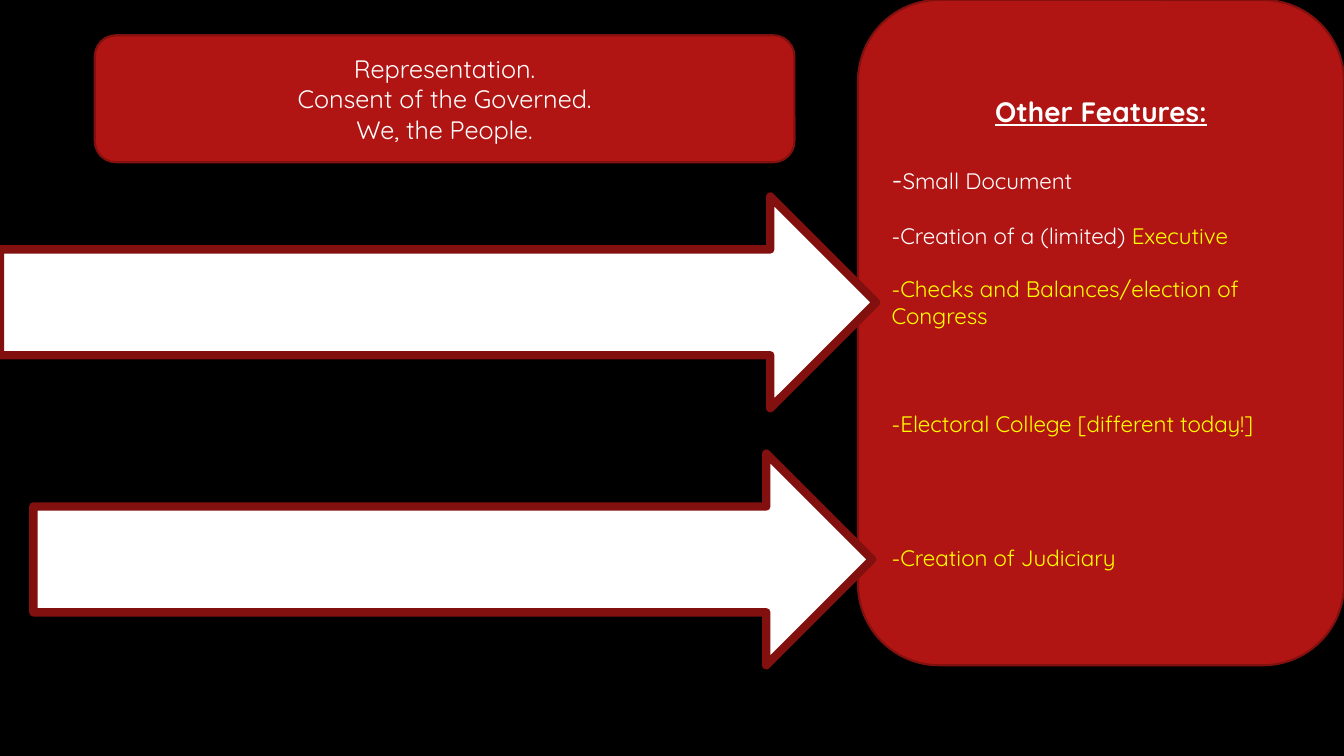
from dataclasses import dataclass

from pptx import Presentation
from pptx.dml.color import RGBColor
from pptx.enum.shapes import MSO_SHAPE as Preset
from pptx.enum.text import MSO_ANCHOR as Anchor, PP_ALIGN as Align
from pptx.shapes.autoshape import Shape
from pptx.slide import Slide
from pptx.util import Inches, Pt

SLIDE_WIDTH, SLIDE_HEIGHT = Inches(13.33), Inches(7.5)


@dataclass(frozen=True)
class Theme:
    font: str = "Quicksand"
    backdrop: RGBColor = RGBColor(0x00, 0x00, 0x00)
    red: RGBColor = RGBColor(0xB0, 0x15, 0x13)
    dark_red: RGBColor = RGBColor(0x82, 0x10, 0x0E)
    white: RGBColor = RGBColor(0xFF, 0xFF, 0xFF)
    yellow: RGBColor = RGBColor(0xFF, 0xFF, 0x00)
    heading_size: int = 20
    principle_size: int = 18
    feature_size: int = 16
    line_height: float = 1.2
    thin_line: float = 1.5
    thick_line: float = 6


THEME = Theme()


@dataclass(frozen=True)
class Area:
    """Position and size in percent of the slide's width and height."""
    left: float
    top: float
    width: float
    height: float


@dataclass(frozen=True)
class Block:
    preset: Preset
    area: Area
    fill: RGBColor
    line_width: float


@dataclass(frozen=True)
class Words:
    text: str
    size: int = THEME.feature_size
    color: RGBColor = THEME.white
    heading: bool = False


@dataclass(frozen=True)
class Line:
    words: tuple[Words, ...]
    space_before: float = 0
    align: Align = Align.LEFT


def gap(lines: int, size: int = THEME.feature_size) -> float:
    """Height in points of a number of text lines."""
    return round(lines * size * THEME.line_height, 1)


FEATURES_PANEL = Block(Preset.ROUNDED_RECTANGLE, Area(63.84, 0, 36.16, 88),
                       THEME.red, THEME.thin_line)
LOWER_ARROW = Block(Preset.RIGHT_ARROW, Area(2.48, 60, 62.41, 28),
                    THEME.white, THEME.thick_line)
UPPER_ARROW = Block(Preset.RIGHT_ARROW, Area(0, 26, 65.19, 28),
                    THEME.white, THEME.thick_line)
PRINCIPLES_BANNER = Block(Preset.ROUNDED_RECTANGLE, Area(7.05, 4.67, 52.06, 16.8),
                          THEME.red, THEME.thin_line)

FEATURES = (
    Line((Words("Other Features:", THEME.heading_size, heading=True),),
         align=Align.CENTER),
    Line((Words("-", THEME.heading_size), Words("Small Document")),
         gap(1, THEME.heading_size)),
    Line((Words("-Creation of a (limited) "),
          Words("Executive", color=THEME.yellow)), gap(1)),
    Line((Words("-Checks and Balances/election of Congress",
                color=THEME.yellow),), gap(1)),
    Line((Words("-Electoral College [different today!]",
                color=THEME.yellow),), gap(3)),
    Line((Words("-Creation of Judiciary", color=THEME.yellow),), gap(4)),
)
PRINCIPLES = tuple(
    Line((Words(principle, THEME.principle_size),), align=Align.CENTER)
    for principle in ("Representation.", "Consent of the Governed.", "We, the People.")
)


def draw_block(slide: Slide, block: Block) -> Shape:
    area = block.area
    shape = slide.shapes.add_shape(
        block.preset,
        round(SLIDE_WIDTH * area.left / 100), round(SLIDE_HEIGHT * area.top / 100),
        round(SLIDE_WIDTH * area.width / 100), round(SLIDE_HEIGHT * area.height / 100))
    shape.shadow.inherit = False
    shape.fill.solid()
    shape.fill.fore_color.rgb = block.fill
    shape.line.color.rgb = THEME.dark_red
    shape.line.width = Pt(block.line_width)
    return shape


def write_lines(shape: Shape, lines: tuple[Line, ...]) -> None:
    frame = shape.text_frame
    frame.word_wrap = True
    frame.vertical_anchor = Anchor.MIDDLE
    for index, line in enumerate(lines):
        paragraph = frame.add_paragraph() if index else frame.paragraphs[0]
        paragraph.alignment = line.align
        if line.space_before:
            paragraph.space_before = Pt(line.space_before)
        for words in line.words:
            run = paragraph.add_run()
            run.text = words.text
            run.font.name = THEME.font
            run.font.size = Pt(words.size)
            run.font.color.rgb = words.color
            run.font.bold = run.font.underline = words.heading


def main() -> None:
    deck = Presentation()
    deck.slide_width, deck.slide_height = SLIDE_WIDTH, SLIDE_HEIGHT
    slide = deck.slides.add_slide(deck.slide_layouts[6])
    slide.background.fill.solid()
    slide.background.fill.fore_color.rgb = THEME.backdrop

    write_lines(draw_block(slide, FEATURES_PANEL), FEATURES)
    for arrow in (LOWER_ARROW, UPPER_ARROW):
        draw_block(slide, arrow)
    write_lines(draw_block(slide, PRINCIPLES_BANNER), PRINCIPLES)
    deck.save("out.pptx")


if __name__ == "__main__":
    main()
